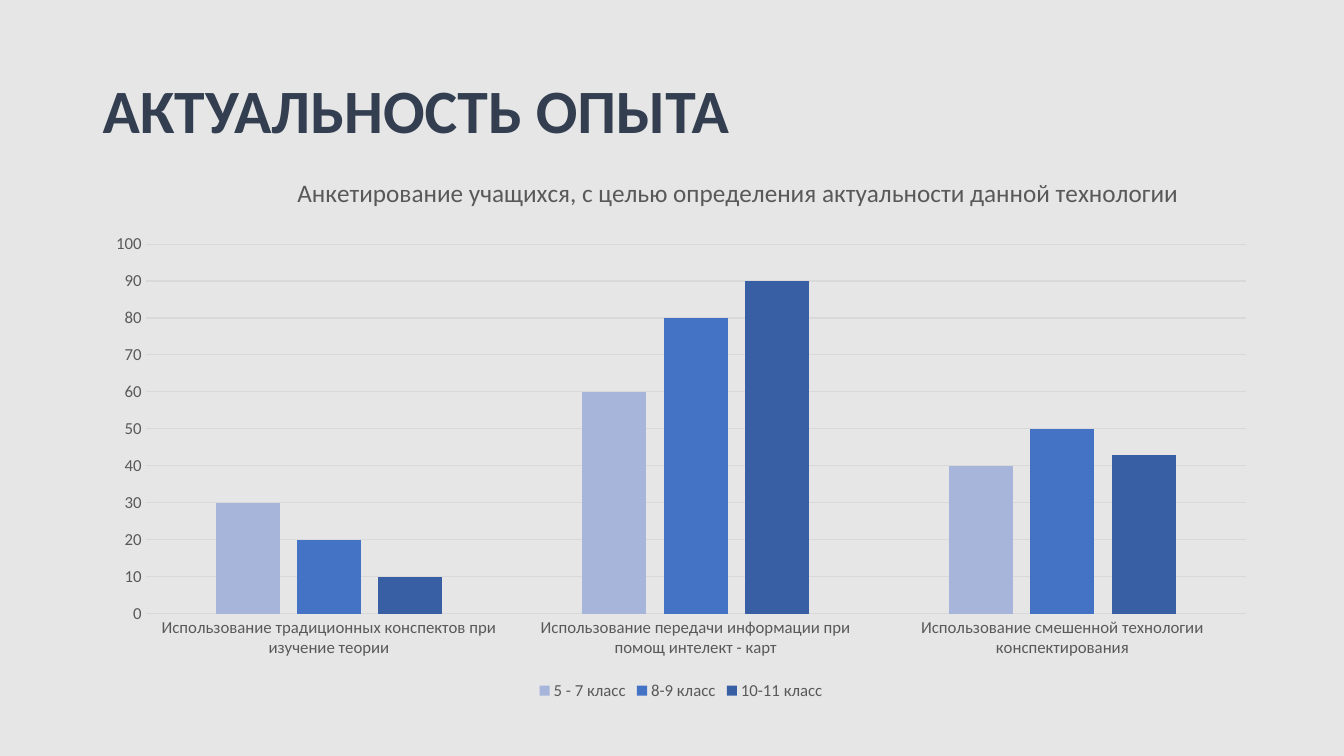
from pptx import Presentation
from pptx.chart.data import CategoryChartData
from pptx.dml.color import RGBColor
from pptx.enum.chart import XL_CHART_TYPE as Kind, XL_LEGEND_POSITION as Spot, XL_TICK_MARK as Tick
from pptx.enum.text import MSO_ANCHOR as Anchor, PP_ALIGN as Align
from pptx.oxml import parse_xml
from pptx.oxml.ns import nsdecls, qn
from pptx.util import Inches, Pt

BACK = RGBColor(0xE7, 0xE6, 0xE6)
NAVY = RGBColor(0x33, 0x3F, 0x50)
GRAY = RGBColor(0x59, 0x59, 0x59)
RULE = RGBColor(0xD9, 0xD9, 0xD9)
FONT = "Calibri"

GROUPS = [
    "Использование традиционных конспектов при изучение теории",
    "Использование передачи информации при помощ интелект - карт",
    "Использование смешенной технологии конспектирования",
]
GRADES = [
    ("5 - 7 класс", (30, 60, 40), RGBColor(0xA8, 0xB5, 0xDB)),
    ("8-9 класс", (20, 80, 50), RGBColor(0x44, 0x72, 0xC4)),
    ("10-11 класс", (10, 90, 43), RGBColor(0x38, 0x5F, 0xA3)),
]


def style(font, size, color, bold=False):
    """Set the face, size, colour and weight of a font."""
    font.name, font.size, font.bold = FONT, Pt(size), bold
    font.color.rgb = color


def rule(line):
    """Draw a thin light line."""
    line.color.rgb = RULE
    line.width = Pt(0.75)


def place(node, index, inner=False, **parts):
    """Give a chart part a manual layout in fractions of the chart."""
    for old in node.findall(qn("c:layout")):
        node.remove(old)
    target = '<c:layoutTarget val="inner"/>' if inner else ""
    modes = '<c:xMode val="edge"/><c:yMode val="edge"/>'
    sizes = "".join(f'<c:{key} val="{val}"/>' for key, val in parts.items())
    node.insert(index, parse_xml(
        f'<c:layout {nsdecls("c")}><c:manualLayout>{target}{modes}{sizes}'
        "</c:manualLayout></c:layout>"))


def add_title(slide, left, top, width, height):
    """Add the slide heading."""
    frame = slide.shapes.add_textbox(left, top, width, height).text_frame
    frame.word_wrap = True
    frame.vertical_anchor = Anchor.MIDDLE
    para = frame.paragraphs[0]
    para.text = "АКТУАЛЬНОСТЬ ОПЫТА"
    para.alignment = Align.JUSTIFY
    para.line_spacing = 0.9
    style(para.runs[0].font, 44, NAVY, True)


def add_survey(slide, left, top, width, height):
    """Add the column chart of survey answers."""
    data = CategoryChartData()
    data.categories = GROUPS
    for name, vals, _ in GRADES:
        data.add_series(name, vals)
    chart = slide.shapes.add_chart(
        Kind.COLUMN_CLUSTERED, left, top, width, height, data).chart
    style(chart.font, 12, GRAY)

    chart.has_title = True
    head = chart.chart_title
    para = head.text_frame.paragraphs[0]
    para.text = "Анкетирование учащихся, с целью определения актуальности данной технологии"
    style(para.runs[0].font, 18, GRAY)
    place(head._element, 1, x=0.17, y=0.01)

    chart.has_legend = True
    chart.legend.position = Spot.BOTTOM
    chart.legend.include_in_layout = False
    style(chart.legend.font, 12, GRAY)

    for axis in (chart.category_axis, chart.value_axis):
        axis.major_tick_mark = axis.minor_tick_mark = Tick.NONE
        style(axis.tick_labels.font, 12, GRAY)
    rule(chart.category_axis.format.line)
    scale = chart.value_axis
    scale.minimum_scale, scale.maximum_scale, scale.major_unit = 0, 100, 10
    scale.format.line.fill.background()
    rule(scale.major_gridlines.format.line)

    plot = chart.plots[0]
    plot.gap_width, plot.overlap = 219, -27
    plot.vary_by_categories = False
    for series, (_, _, color) in zip(plot.series, GRADES):
        series.format.fill.solid()
        series.format.fill.fore_color.rgb = color
    place(plot._element.getparent(), 0, True, x=0.045, y=0.146, w=0.935, h=0.686)


def main():
    """Build and save the slide."""
    deck = Presentation()
    deck.slide_width, deck.slide_height = Inches(13.33), Inches(7.5)
    slide = deck.slides.add_slide(deck.slide_layouts[6])
    slide.background.fill.solid()
    slide.background.fill.fore_color.rgb = BACK
    add_title(slide, Inches(0.92), Inches(0.4), Inches(11.5), Inches(1.45))
    add_survey(slide, Inches(0.92), Inches(1.64), Inches(11.67), Inches(5.35))
    deck.save("out.pptx")


if __name__ == "__main__":
    main()
